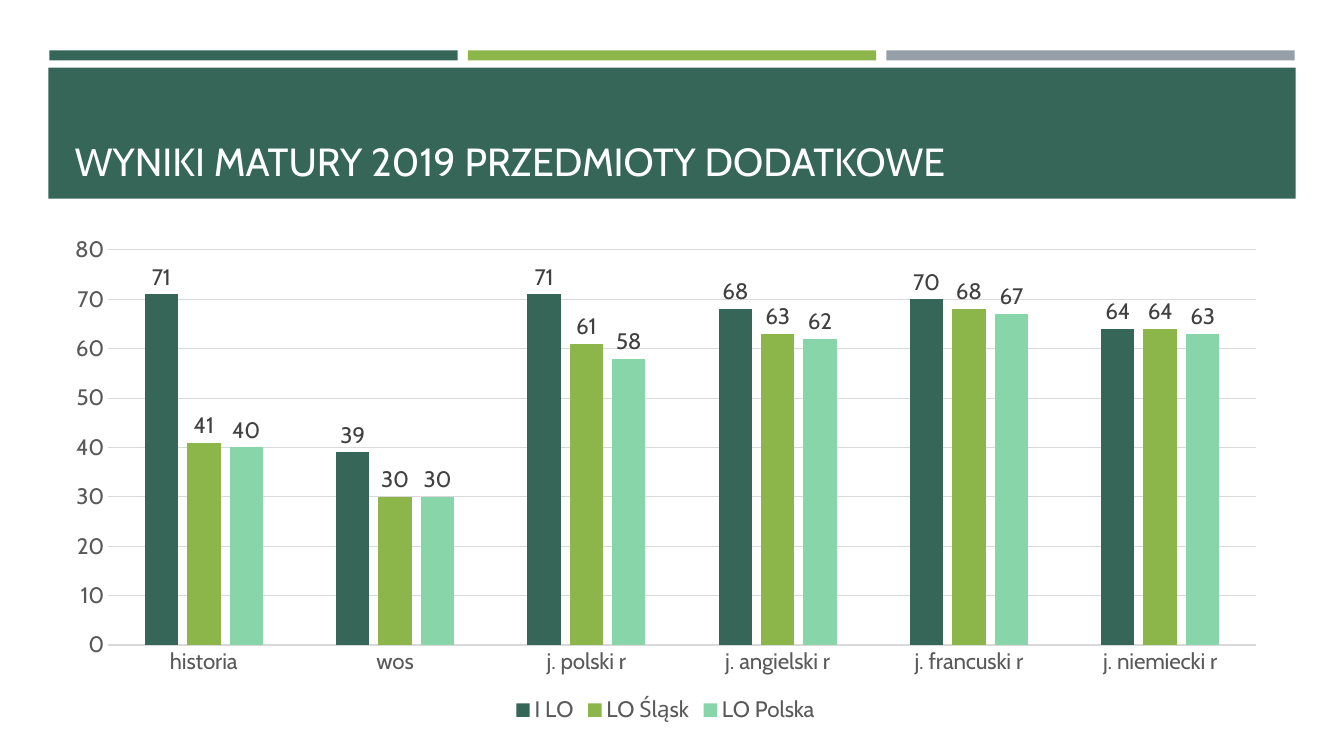
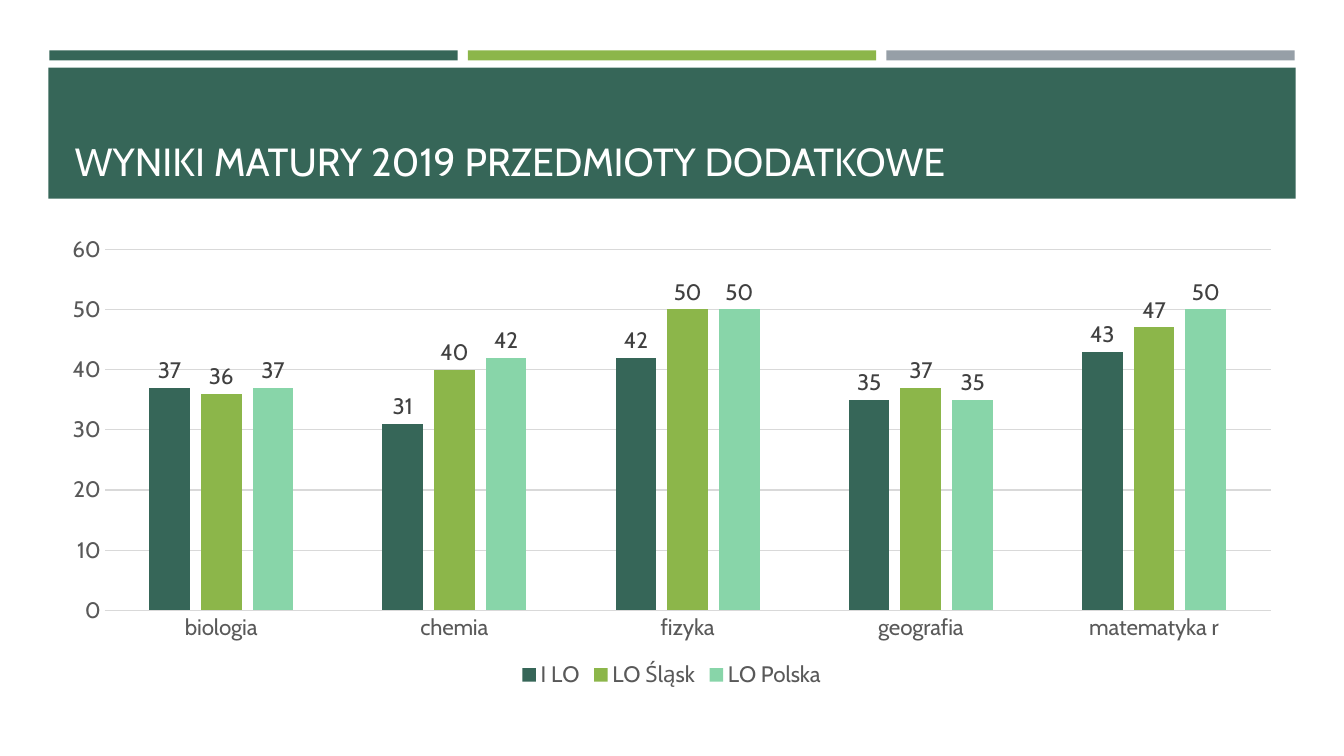
import pptx
import pptx.chart.data
import pptx.dml.color
import pptx.enum.chart
import pptx.enum.shapes
import pptx.enum.text
import pptx.util

Inches, Pt = pptx.util.Inches, pptx.util.Pt
FONT = "Cabin"
COLORS = {
    "green": "366658", "lime": "8CB64A", "mint": "88D5A9", "gray": "969FA7",
    "white": "FFFFFF", "axis": "595959", "label": "404040", "grid": "D9D9D9",
}
SERIES_COLORS = ["green", "lime", "mint"]
TITLE = "WYNIKI MATURY 2019 PRZEDMIOTY DODATKOWE"

CHARTS = [
    {
        "box": (0.5, 2.25, 12.2, 4.97), "max": 80,
        "cats": ["historia", "wos", "j. polski r", "j. angielski r",
                 "j. francuski r", "j. niemiecki r"],
        "series": {
            "I LO": [71, 39, 71, 68, 70, 64],
            "LO Śląsk": [41, 30, 61, 63, 68, 64],
            "LO Polska": [40, 30, 58, 62, 67, 63],
        },
    },
    {
        "box": (0.47, 2.25, 12.38, 4.62), "max": 60,
        "cats": ["biologia", "chemia", "fizyka", "geografia", "matematyka r"],
        "series": {
            "I LO": [37, 31, 42, 35, 43],
            "LO Śląsk": [36, 40, 50, 37, 47],
            "LO Polska": [37, 42, 50, 35, 50],
        },
    },
]


def set_font(font, size=16, color="axis"):
    font.name = FONT
    font.size = Pt(size)
    font.bold = False
    font.color.rgb = pptx.dml.color.RGBColor.from_string(COLORS[color])


def write(tf, text, size=16, color="axis",
          align=pptx.enum.text.PP_ALIGN.LEFT,
          anchor=pptx.enum.text.MSO_ANCHOR.BOTTOM):
    tf.word_wrap = True
    tf.auto_size = pptx.enum.text.MSO_AUTO_SIZE.NONE
    tf.vertical_anchor = anchor
    p = tf.paragraphs[0]
    p.alignment = align
    r = p.add_run()
    r.text = text
    set_font(r.font, size, color)


prs = pptx.Presentation()
prs.slide_width, prs.slide_height = Inches(13.33), Inches(7.5)
layout = prs.slide_layouts[5]
slides = [prs.slides.add_slide(layout) for _ in CHARTS]

# Shared bands: three strips and the title band, moved to the layout
bands = [(0.49 + 4.15 * i, 0.5, 4.05, 0.1, color)
         for i, color in enumerate(["green", "lime", "gray"])]
bands.append((0.48, 0.67, 12.37, 1.3, "green"))
for i, (*box, color) in enumerate(bands):
    sp = slides[0].shapes.add_shape(
        pptx.enum.shapes.MSO_SHAPE.RECTANGLE, *map(Inches, box))
    sp.shadow.inherit = False
    sp.fill.solid()
    sp.fill.fore_color.rgb = pptx.dml.color.RGBColor.from_string(COLORS[color])
    sp.line.fill.background()
    layout.shapes.element.insert(2 + i, sp.element)

for s, spec_data in zip(slides, CHARTS):
    # Title
    title = s.shapes.title
    title.left, title.top = Inches(0.64), Inches(0.77)
    title.width, title.height = Inches(12.06), Inches(1.11)
    write(title.text_frame, TITLE, size=28, color="white")

    # Chart
    data = pptx.chart.data.CategoryChartData()
    data.categories = spec_data["cats"]
    for name, values in spec_data["series"].items():
        data.add_series(name, values)
    chart = s.shapes.add_chart(
        pptx.enum.chart.XL_CHART_TYPE.COLUMN_CLUSTERED,
        *map(Inches, spec_data["box"]), data).chart
    set_font(chart.font)
    chart.has_title = False
    chart.has_legend = True
    chart.legend.position = pptx.enum.chart.XL_LEGEND_POSITION.BOTTOM
    chart.legend.include_in_layout = False
    set_font(chart.legend.font)

    # Axes
    cat_axis, val_axis = chart.category_axis, chart.value_axis
    for axis in (cat_axis, val_axis):
        axis.major_tick_mark = pptx.enum.chart.XL_TICK_MARK.NONE
        axis.minor_tick_mark = pptx.enum.chart.XL_TICK_MARK.NONE
        set_font(axis.tick_labels.font)
    val_axis.minimum_scale, val_axis.maximum_scale = 0, spec_data["max"]
    val_axis.major_unit = 10
    val_axis.has_major_gridlines = True
    val_axis.format.line.fill.background()
    for line in (cat_axis.format.line, val_axis.major_gridlines.format.line):
        line.width = Pt(0.75)
        line.color.rgb = pptx.dml.color.RGBColor.from_string(COLORS["grid"])

    # Columns and their labels
    plot = chart.plots[0]
    plot.gap_width, plot.overlap = 219, -27
    plot.vary_by_categories = False
    for series, color in zip(plot.series, SERIES_COLORS):
        series.format.fill.solid()
        series.format.fill.fore_color.rgb = pptx.dml.color.RGBColor.from_string(
            COLORS[color])
        labels = series.data_labels
        labels.show_value = True
        labels.position = pptx.enum.chart.XL_LABEL_POSITION.OUTSIDE_END
        set_font(labels.font, color="label")

prs.save("out.pptx")
